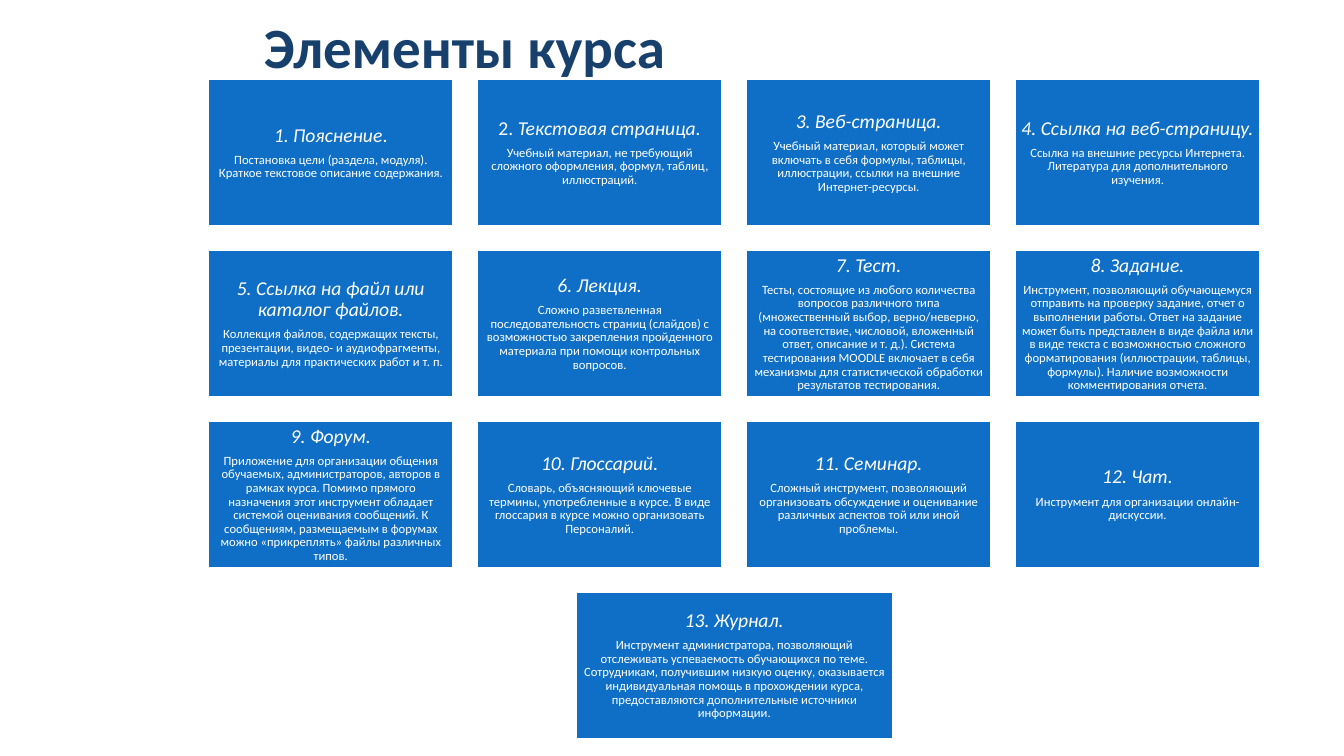
import pptx
import pptx.dml.color
import pptx.enum.shapes
import pptx.enum.text
import pptx.util

Pt = pptx.util.Pt
COLORS = {"title": "17406D", "card": "0F6FC6", "white": "FFFFFF"}
FONT = "Calibri"
COLUMNS = 4
CARD_WIDTH, CARD_HEIGHT, GAP = 174.6, 104.6, 17.5
LAST_CARD_WIDTH = 226

ELEMENTS = [
    ([("1. Пояснение", True), (".", False)],
     "Постановка цели (раздела, модуля). Краткое текстовое описание содержания."),
    ([("2. ", False), ("Текстовая страница.", True)],
     "Учебный материал, не требующий сложного оформления, формул, таблиц, иллюстраций."),
    ([("3. Веб-страница.", True)],
     "Учебный материал, который может включать в себя формулы, таблицы, иллюстрации, "
     "ссылки на внешние Интернет-ресурсы."),
    ([("4. Ссылка на веб-страницу.", True)],
     "Ссылка на внешние ресурсы Интернета. Литература для дополнительного изучения."),
    ([("5. Ссылка на файл или каталог файлов.", True)],
     "Коллекция файлов, содержащих тексты, презентации, видео- и аудиофрагменты, "
     "материалы для практических работ и т. п."),
    ([("6. Лекция.", True)],
     "Сложно разветвленная последовательность страниц (слайдов) с возможностью "
     "закрепления пройденного материала при помощи контрольных вопросов."),
    ([("7. Тест.", True)],
     "Тесты, состоящие из любого количества вопросов различного типа (множественный выбор, "
     "верно/неверно, на соответствие, числовой, вложенный ответ, описание и т. д.). "
     "Система тестирования MOODLE включает в себя механизмы для статистической обработки "
     "результатов тестирования."),
    ([("8. Задание.", True)],
     "Инструмент, позволяющий обучающемуся отправить на проверку задание, отчет о выполнении "
     "работы. Ответ на задание может быть представлен в виде файла или в виде текста с "
     "возможностью сложного форматирования (иллюстрации, таблицы, формулы). Наличие "
     "возможности комментирования отчета."),
    ([("9. Форум.", True)],
     "Приложение для организации общения обучаемых, администраторов, авторов в рамках курса. "
     "Помимо прямого назначения этот инструмент обладает системой оценивания сообщений. "
     "К сообщениям, размещаемым в форумах можно «прикреплять» файлы различных типов."),
    ([("10. Глоссарий.", True)],
     "Словарь, объясняющий ключевые термины, употребленные в курсе. В виде глоссария в курсе "
     "можно организовать Персоналий."),
    ([("11. Семинар.", True)],
     "Сложный инструмент, позволяющий организовать обсуждение и оценивание различных "
     "аспектов той или иной проблемы."),
    ([("12. Чат.", True)],
     "Инструмент для организации онлайн-дискуссии."),
    ([("13. Журнал.", True)],
     "Инструмент администратора, позволяющий отслеживать успеваемость обучающихся по теме. "
     "Сотрудникам, получившим низкую оценку, оказывается индивидуальная помощь в прохождении "
     "курса, предоставляются дополнительные источники информации."),
]


def rgb(name):
    """Return the named colour."""
    return pptx.dml.color.RGBColor.from_string(COLORS[name])


def write(paragraph, runs, size, color="white", bold=False, align="CENTER", spacing=0.9, after=0):
    """Fill a paragraph with (text, italic) runs in one format."""
    paragraph.alignment = getattr(pptx.enum.text.PP_ALIGN, align)
    paragraph.line_spacing = spacing
    paragraph.space_after = Pt(after)
    for text, italic in runs:
        run = paragraph.add_run()
        run.text = text
        run.font.name = FONT
        run.font.size = Pt(size)
        run.font.bold = bold
        run.font.italic = italic
        run.font.color.rgb = rgb(color)


def add_title(slide, left, top, width, height):
    """Place the slide title in the given box."""
    title = slide.shapes.add_textbox(Pt(left), Pt(top), Pt(width), Pt(height)).text_frame
    title.word_wrap = True
    title.vertical_anchor = pptx.enum.text.MSO_ANCHOR.MIDDLE
    write(title.paragraphs[0], [("Элементы курса", False)], 40.7,
          color="title", bold=True, align="LEFT", spacing=0.8)


def add_card(slide, heading, description, left, top, width, height):
    """Place one course element in the given box."""
    card = slide.shapes.add_shape(pptx.enum.shapes.MSO_SHAPE.RECTANGLE,
                                  Pt(left), Pt(top), Pt(width), Pt(height))
    card.shadow.inherit = False
    card.fill.solid()
    card.fill.fore_color.rgb = rgb("card")
    card.line.color.rgb = rgb("white")
    card.line.width = Pt(1)
    frame = card.text_frame
    frame.word_wrap = True
    frame.vertical_anchor = pptx.enum.text.MSO_ANCHOR.MIDDLE
    frame.margin_left = frame.margin_right = Pt(4.2)
    frame.margin_top = frame.margin_bottom = Pt(4.2)
    write(frame.paragraphs[0], heading, 14, after=4.9)
    write(frame.add_paragraph(), [(description, False)], 9)


def add_cards(slide, left, top):
    """Lay out the elements in full rows, with the last one centred below."""
    grid_width = COLUMNS * CARD_WIDTH + (COLUMNS - 1) * GAP
    for index, (heading, description) in enumerate(ELEMENTS):
        row, column = divmod(index, COLUMNS)
        width, card_left = CARD_WIDTH, left + column * (CARD_WIDTH + GAP)
        if index == len(ELEMENTS) - 1:
            width = LAST_CARD_WIDTH
            card_left = left + (grid_width - width) / 2
        add_card(slide, heading, description, card_left,
                 top + row * (CARD_HEIGHT + GAP), width, CARD_HEIGHT)


def main():
    """Build and save the slide."""
    deck = pptx.Presentation()
    deck.slide_width, deck.slide_height = Pt(960), Pt(540)
    slide = deck.slides.add_slide(deck.slide_layouts[6])
    add_title(slide, 181.4, 12.2, 743, 50.4)
    add_cards(slide, 149, 56.9)
    deck.save("out.pptx")


if __name__ == "__main__":
    main()
